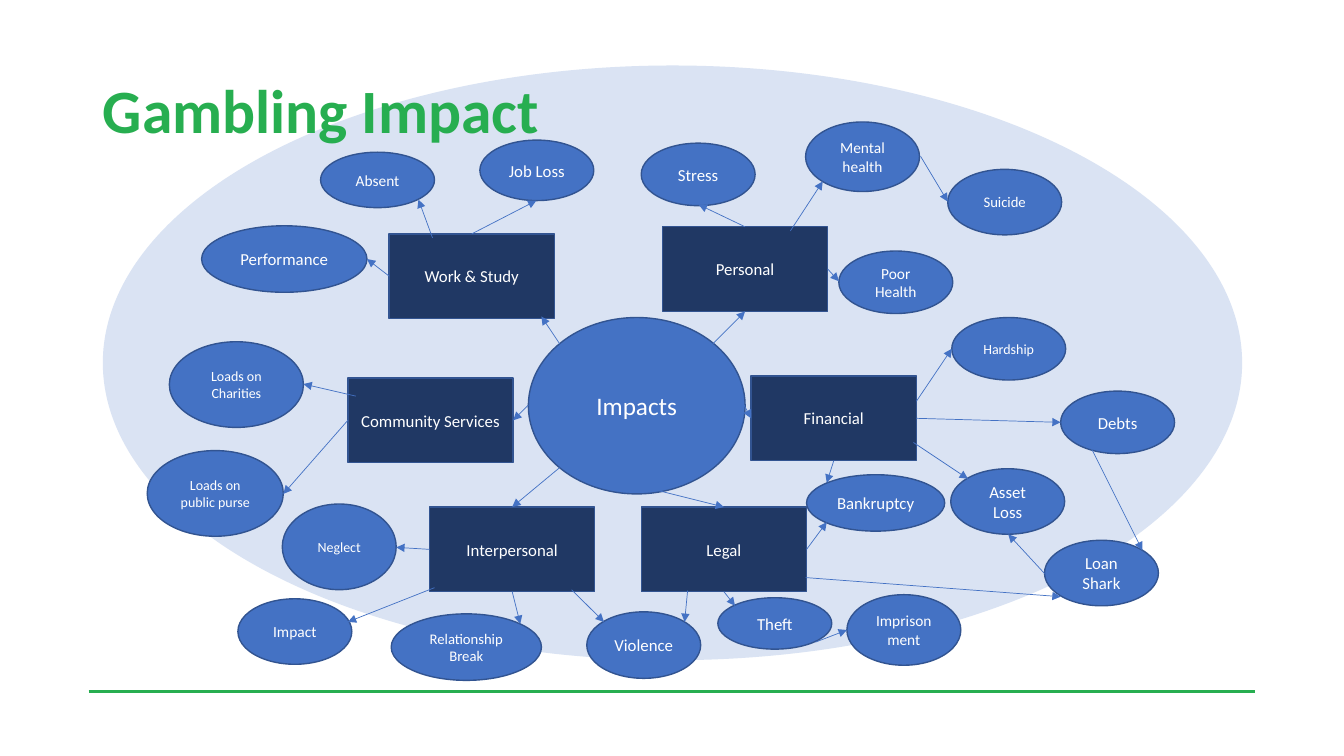
"""Build the Gambling Impact mind map slide."""
from lxml.etree import SubElement
from pptx import Presentation
from pptx.dml.color import RGBColor
from pptx.enum.shapes import MSO_CONNECTOR, MSO_SHAPE
from pptx.enum.text import MSO_ANCHOR, PP_ALIGN
from pptx.oxml.ns import qn
from pptx.util import Inches, Pt

COLORS = {
    "green": "27AE50",
    "pale": "DAE3F3",
    "blue": "4472C4",
    "navy": "203864",
    "edge": "325491",
    "white": "FFFFFF",
}
TOP, LEFT, BOTTOM, RIGHT = range(4)
TOPIC = (1.64, 0.84)
WIDE = 1.13

TOPICS = {
    "Work & Study": (3.86, 2.32),
    "Personal": (6.57, 2.25),
    "Financial": (7.45, 3.73),
    "Legal": (6.36, 5.03),
    "Interpersonal": (4.26, 5.03),
    "Community Services": (3.45, 3.75),
}
EFFECTS = [
    ("Absent", 3.18, 1.51, WIDE, 0.55, 11),
    ("Job Loss", 4.76, 1.39, WIDE, 0.6, 12),
    ("Performance", 2, 2.24, 1.64, 0.66, 12),
    ("Stress", 6.36, 1.42, WIDE, 0.62, 12),
    ("Mental health", 7.99, 1.21, WIDE, 0.69, 11),
    ("Poor Health", 8.32, 2.49, WIDE, 0.62, 11),
    ("Suicide", 9.4, 1.68, WIDE, 0.65, 10.5),
    ("Hardship", 9.44, 3.15, WIDE, 0.62, 10),
    ("Debts", 10.52, 3.88, WIDE, 0.62, 12),
    ("Asset Loss", 9.43, 4.65, WIDE, 0.65, 12),
    ("Bankruptcy", 8, 4.71, 1.37, 0.56, 12),
    ("Loan Shark", 10.36, 5.36, WIDE, 0.65, 12),
    ("Theft", 7.12, 5.93, WIDE, 0.51, 12),
    ("Imprisonment", 8.4, 5.9, WIDE, 0.7, 11),
    ("Violence", 5.82, 6.07, WIDE, 0.66, 12),
    ("Relationship Break", 3.88, 6.09, 1.49, 0.66, 10.5),
    ("Impact", 2.36, 5.94, WIDE, 0.65, 11),
    ("Neglect", 2.8, 5, WIDE, 0.85, 10),
    ("Loads on Charities", 1.68, 3.39, 1.33, 0.85, 10),
    ("Loads on public purse", 1.46, 4.47, 1.35, 0.85, 10),
]
ARROWS = [
    (("Work & Study", TOP), (5.32, 1.99)),
    ((4.29, 2.36), (4.15, 1.98)),
    (("Work & Study", LEFT), (3.64, 2.57)),
    (("Personal", TOP), (6.93, 2.03)),
    ((7.84, 2.29), (8.16, 1.8)),
    (("Personal", RIGHT), (8.32, 2.79)),
    ((9.13, 1.55), (9.4, 2)),
    ((9.09, 3.98), (9.44, 3.46)),
    (("Financial", RIGHT), (10.52, 4.19)),
    ((9.06, 4.39), (9.6, 4.75)),
    (("Financial", BOTTOM), (8.2, 4.79)),
    ((10.81, 4.42), (11.33, 5.46)),
    ((10.36, 5.69), (10, 5.3)),
    (("Legal", RIGHT), (8.2, 5.18)),
    ((7.99, 5.73), (10.52, 5.92)),
    (("Legal", BOTTOM), (7.29, 6.01)),
    ((8.09, 6.37), (8.4, 6.25)),
    ((6.82, 5.86), (6.79, 6.17)),
    ((6.46, 4.85), ("Legal", TOP)),
    ((5.55, 3.41), (5.37, 3.14)),
    ((7.07, 3.41), ("Personal", BOTTOM)),
    ((7.38, 4.02), ("Financial", LEFT)),
    ((5.24, 4.02), ("Community Services", RIGHT)),
    ((5.55, 4.64), ("Interpersonal", TOP)),
    ((5.67, 5.85), (5.99, 6.17)),
    (("Interpersonal", BOTTOM), (5.16, 6.19)),
    ((4.31, 5.83), (3.45, 6.17)),
    (("Interpersonal", LEFT), (3.93, 5.43)),
    (("Community Services", LEFT), (2.81, 4.9)),
    ((3.53, 3.93), (3.01, 3.81)),
]


def tint(name):
    return RGBColor.from_string(COLORS[name])


def style(item, values):
    for key, value in values.items():
        setattr(item, key, value)


def add_form(slide, kind, box, fill):
    form = slide.shapes.add_shape(kind, *map(Inches, box))
    form.shadow.inherit = False
    form.fill.solid()
    form.fill.fore_color.rgb = tint(fill)
    form.line.fill.background()
    return form


def add_node(slide, kind, text, box, size, fill):
    node = add_form(slide, kind, box, fill)
    node.line.color.rgb = tint("edge")
    node.line.width = Pt(1)
    frame = node.text_frame
    style(frame, {"word_wrap": True, "vertical_anchor": MSO_ANCHOR.MIDDLE})
    para = frame.paragraphs[0]
    style(para, {"text": text, "alignment": PP_ALIGN.CENTER})
    style(para.font, {"name": "Calibri", "size": Pt(size)})
    para.font.color.rgb = tint("white")
    return node


def add_line(slide, start, end, color, width):
    line = slide.shapes.add_connector(
        MSO_CONNECTOR.STRAIGHT, *map(Inches, (*start, *end)))
    line.line.color.rgb = tint(color)
    line.line.width = Pt(width)
    SubElement(line.element.spPr, qn("a:effectLst"))
    return line


def add_arrow(slide, nodes, start, end):
    joins = [spot[0] in nodes for spot in (start, end)]
    spots = [(0, 0) if join else spot for join, spot in zip(joins, (start, end))]
    line = add_line(slide, *spots, "blue", 0.5)
    if joins[0]:
        line.begin_connect(nodes[start[0]], start[1])
    if joins[1]:
        line.end_connect(nodes[end[0]], end[1])
    SubElement(line.element.spPr.find(qn("a:ln")), qn("a:tailEnd"), type="triangle")


def set_title(slide, text):
    title = slide.shapes.title
    style(title, {"left": Inches(0.92), "top": Inches(0.4),
                  "width": Inches(11.5), "height": Inches(1.45)})
    title.text_frame.vertical_anchor = MSO_ANCHOR.MIDDLE
    para = title.text_frame.paragraphs[0]
    style(para, {"text": text, "alignment": PP_ALIGN.LEFT, "line_spacing": 0.9})
    style(para.font, {"name": "Calibri", "size": Pt(44), "bold": True})
    para.font.color.rgb = tint("green")
    return title


def main():
    deck = Presentation()
    style(deck, {"slide_width": Inches(13.33), "slide_height": Inches(7.5)})
    slide = deck.slides.add_slide(deck.slide_layouts[5])
    title = set_title(slide, "Gambling Impact")
    rule = add_line(slide, (0.88, 6.86), (12.45, 6.86), "green", 2.25)
    cloud = add_form(slide, MSO_SHAPE.OVAL, (1.02, 0.65, 11.3, 5.9), "pale")
    for back in (rule, cloud):
        title.element.addprevious(back.element)
    add_node(slide, MSO_SHAPE.OVAL, "Impacts", (5.24, 3.15, 2.15, 1.75), 18, "blue")
    nodes = {
        name: add_node(slide, MSO_SHAPE.RECTANGLE, name, (*spot, *TOPIC), 12, "navy")
        for name, spot in TOPICS.items()
    }
    for name, *box, size in EFFECTS:
        add_node(slide, MSO_SHAPE.OVAL, name, box, size, "blue")
    for start, end in ARROWS:
        add_arrow(slide, nodes, start, end)
    deck.save("out.pptx")


if __name__ == "__main__":
    main()
